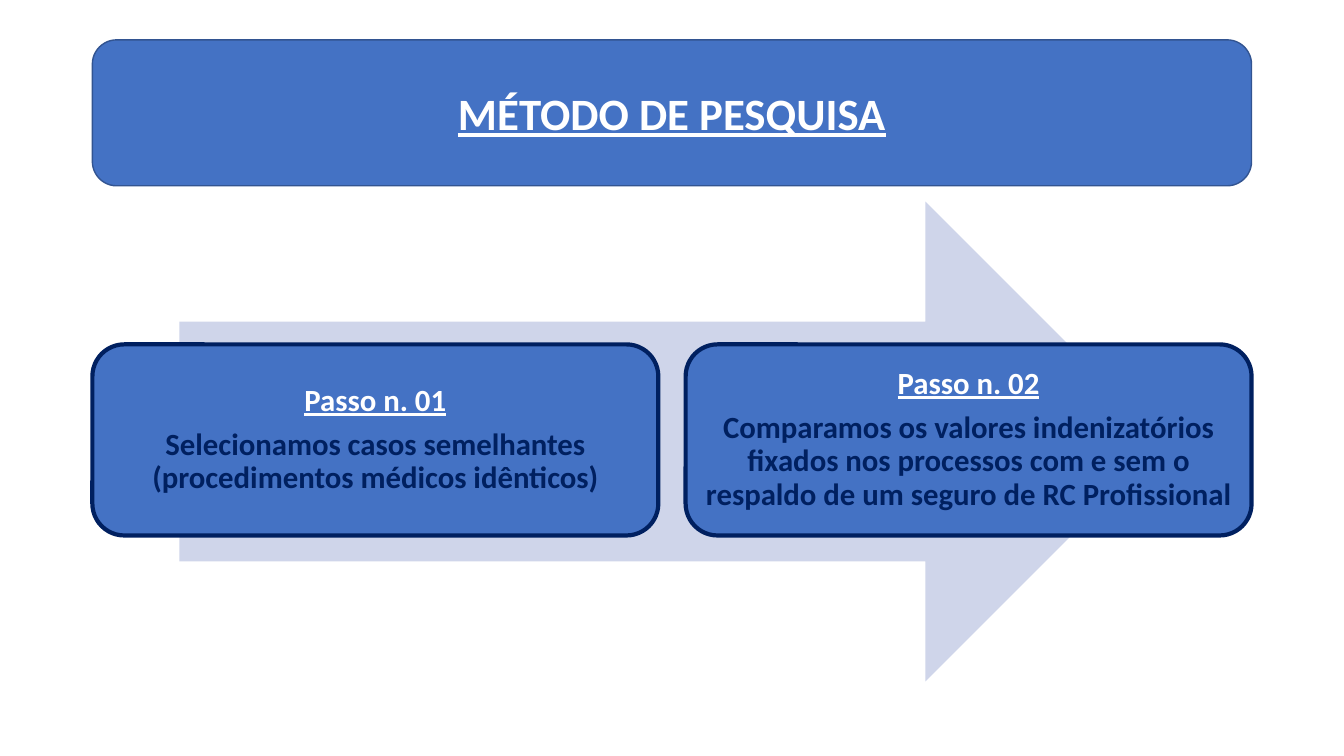
from pptx import Presentation
from pptx.dml.color import RGBColor
from pptx.enum.shapes import MSO_SHAPE
from pptx.enum.text import MSO_ANCHOR, PP_ALIGN
from pptx.util import Pt

PX = 9525
ARROW = MSO_SHAPE.RIGHT_ARROW
ROUNDED = MSO_SHAPE.ROUNDED_RECTANGLE
MIDDLE = MSO_ANCHOR.MIDDLE
CENTER = PP_ALIGN.CENTER

FONT = "Calibri"
BLUE = "4472C4"
NAVY = "002060"
WHITE = "FFFFFF"

LEFT = 88
TOTAL_WIDTH = 1104
STEP_WIDTH = 539
STEPS = [
    ("Passo n. 01",
     "Selecionamos casos semelhantes (procedimentos médicos idênticos)"),
    ("Passo n. 02",
     "Comparamos os valores indenizatórios fixados nos processos com e sem o "
     "respaldo de um seguro de RC Profissional"),
]


def color(hex_value):
    """Turn a hex string into a colour."""
    return RGBColor.from_string(hex_value)


def add_block(slide, kind, left, top, width, height, fill, line=None, line_width=1):
    """Add a filled preset shape, outlined only when a line colour is given."""
    shape = slide.shapes.add_shape(kind, left * PX, top * PX, width * PX, height * PX)
    shape.shadow.inherit = False
    shape.fill.solid()
    shape.fill.fore_color.rgb = color(fill)
    if line:
        shape.line.color.rgb = color(line)
        shape.line.width = Pt(line_width)
    else:
        shape.line.fill.background()
    return shape


def write_paragraph(paragraph, text, size, hex_value, underline):
    """Write one centred bold paragraph."""
    paragraph.text = text
    paragraph.alignment = CENTER
    font = paragraph.runs[0].font
    font.name = FONT
    font.size = Pt(size)
    font.bold = True
    font.underline = underline
    font.color.rgb = color(hex_value)


def add_title(slide, text):
    """Add the title banner."""
    banner = add_block(slide, ROUNDED, LEFT, 38, TOTAL_WIDTH, 139, BLUE, "325491")
    banner.text_frame.vertical_anchor = MIDDLE
    write_paragraph(banner.text_frame.paragraphs[0], text, 32, WHITE, True)


def add_step(slide, left, heading, description):
    """Add one step card with its heading and description."""
    card = add_block(slide, ROUNDED, left, 328, STEP_WIDTH, 182, BLUE, NAVY, 3)
    frame = card.text_frame
    frame.word_wrap = True
    frame.vertical_anchor = MIDDLE
    frame.margin_left = frame.margin_right = 8 * PX
    frame.margin_top = frame.margin_bottom = 8 * PX
    write_paragraph(frame.paragraphs[0], heading, 22, WHITE, True)
    write_paragraph(frame.add_paragraph(), description, 22, NAVY, False)
    for paragraph in frame.paragraphs:
        paragraph.line_spacing = 0.9
        paragraph.space_after = Pt(7.7)


def main():
    """Build and save the slide."""
    presentation = Presentation()
    presentation.slide_width = 1280 * PX
    presentation.slide_height = 720 * PX
    slide = presentation.slides.add_slide(presentation.slide_layouts[6])
    add_block(slide, ARROW, 171, 192, 939, 457, "CFD5EA")
    pitch = TOTAL_WIDTH - STEP_WIDTH
    for index, (heading, description) in enumerate(STEPS):
        add_step(slide, LEFT + index * pitch, heading, description)
    add_title(slide, "MÉTODO DE PESQUISA")
    presentation.save("out.pptx")


if __name__ == "__main__":
    main()
